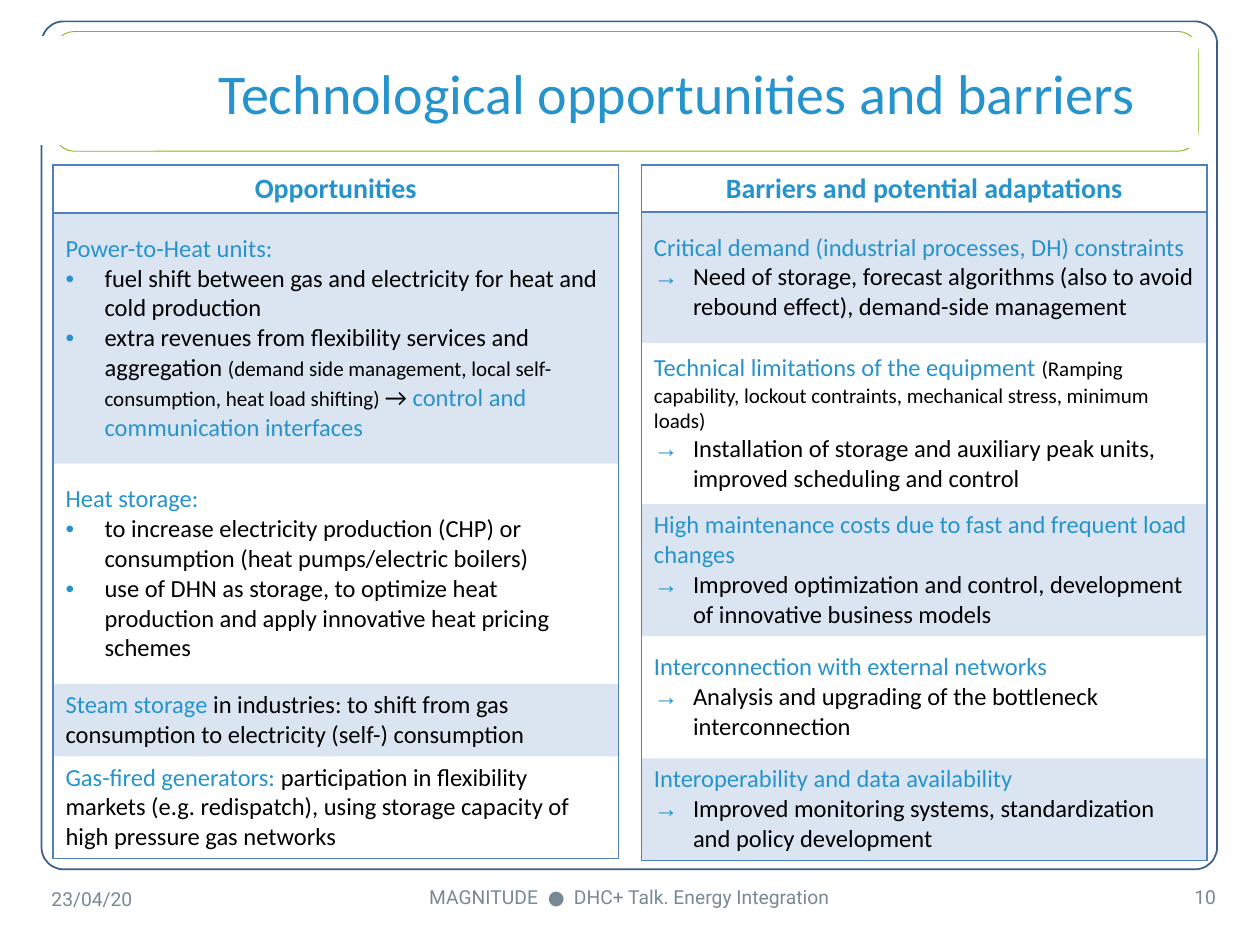
from lxml import etree
from pptx import Presentation
from pptx.dml.color import RGBColor
from pptx.enum.shapes import MSO_SHAPE
from pptx.enum.text import MSO_ANCHOR, MSO_AUTO_SIZE, PP_ALIGN
from pptx.oxml.ns import qn
from pptx.util import Inches, Pt

ROUNDED, RECTANGLE = MSO_SHAPE.ROUNDED_RECTANGLE, MSO_SHAPE.RECTANGLE
LEFT, CENTER, RIGHT = PP_ALIGN.LEFT, PP_ALIGN.CENTER, PP_ALIGN.RIGHT
MIDDLE = MSO_ANCHOR.MIDDLE

WHITE = RGBColor(0xFF, 0xFF, 0xFF)
BLACK = RGBColor(0, 0, 0)
GREEN = RGBColor(0x84, 0xB8, 0x19)
NAVY = RGBColor(0x3A, 0x5F, 0x8C)
SKY = RGBColor(0x26, 0x93, 0xCD)
GRID_BLUE = RGBColor(0x4F, 0x81, 0xBD)
GREY = RGBColor(0x77, 0x89, 0x93)

PLAIN_TABLE_STYLE = "{2D5ABB26-0587-4C30-8999-92F81FD0307C}"

# Text formats
TITLE = dict(size=Pt(32), name="Calibri")
HEADER = dict(size=Pt(16), name="Calibri", bold=True)
BODY = dict(size=Pt(14), name="Calibri", bold=False)
SMALL = dict(BODY, size=Pt(12))
FOOTER = dict(size=Pt(11), name="Roboto")

# Table rows: (height, paragraphs); a paragraph is (bullet, spans)
OPPORTUNITIES = [
    (1.99, [
        ("", [("Power-to-Heat units:", BODY, SKY)]),
        ("•", [("fuel shift between gas and electricity for heat and cold production", BODY, BLACK)]),
        ("•", [("extra revenues from flexibility services and aggregation ", BODY, BLACK),
               ("(demand side management, local self-consumption, heat load shifting) ", SMALL, BLACK),
               ("→ ", BODY, BLACK),
               ("control and communication interfaces", BODY, SKY)]),
    ]),
    (1.75, [
        ("", [("Heat storage:", BODY, SKY)]),
        ("•", [("to increase electricity production (CHP) or consumption "
                "(heat pumps/electric boilers)", BODY, BLACK)]),
        ("•", [("use of DHN as storage, to optimize heat production and apply "
                "innovative heat pricing schemes", BODY, BLACK)]),
    ]),
    (0.57, [
        ("", [("Steam storage ", BODY, SKY),
              ("in industries: to shift from gas consumption to electricity "
               "(self-) consumption", BODY, BLACK)]),
    ]),
    (0.81, [
        ("", [("Gas-fired generators: ", BODY, SKY),
              ("participation in flexibility markets (e.g. redispatch), using storage "
               "capacity of high pressure gas networks", BODY, BLACK)]),
    ]),
]
BARRIERS = [
    (1.04, [
        ("", [("Critical demand (industrial processes, DH) constraints", BODY, SKY)]),
        ("→", [("Need of storage, forecast algorithms (also to avoid rebound effect), "
                "demand-side management", BODY, BLACK)]),
    ]),
    (1.28, [
        ("", [("Technical limitations of the equipment ", BODY, SKY),
              ("(Ramping capability, lockout contraints, mechanical stress, "
               "minimum loads)", SMALL, BLACK)]),
        ("→", [("Installation of storage and auxiliary peak units, improved "
                "scheduling and control", BODY, BLACK)]),
    ]),
    (1.04, [
        ("", [("High maintenance costs due to fast and frequent load changes", BODY, SKY)]),
        ("→", [("Improved optimization and control, development of innovative "
                "business models", BODY, BLACK)]),
    ]),
    (0.97, [
        ("", [("Interconnection with external networks", BODY, SKY)]),
        ("→", [("Analysis and upgrading of the bottleneck interconnection", BODY, BLACK)]),
    ]),
    (0.74, [
        ("", [("Interoperability and data availability", BODY, SKY)]),
        ("→", [("Improved monitoring systems, standardization and policy "
                "development", BODY, BLACK)]),
    ]),
]


def add_span(para, text, style, color):
    span = para.add_run()
    span.text = text
    for name, value in style.items():
        setattr(span.font, name, value)
    span.font.color.rgb = color


def paint(shape, fill, line, width):
    if fill is None:
        shape.fill.background()
    else:
        shape.fill.solid()
        shape.fill.fore_color.rgb = fill
    shape.line.color.rgb = line
    shape.line.width = Pt(width)


def add_frame(page, kind, area, fill, line, width, corner=None):
    frame = page.shapes.add_shape(kind, *map(Inches, area))
    frame.shadow.inherit = False
    paint(frame, fill, line, width)
    if corner is not None:
        frame.adjustments[0] = corner


def set_title(page, text, area):
    title = page.shapes.title
    title.left, title.top, title.width, title.height = map(Inches, area)
    outline = etree.SubElement(title._element.spPr, qn("a:prstGeom"), prst="roundRect")
    etree.SubElement(outline, qn("a:avLst"))
    paint(title, WHITE, WHITE, 1)
    frame = title.text_frame
    frame.word_wrap, frame.auto_size = True, MSO_AUTO_SIZE.NONE
    frame.vertical_anchor = MIDDLE
    para = frame.paragraphs[0]
    para.alignment = CENTER
    add_span(para, text, TITLE, SKY)
    # Bring the title in front of the frames
    page.shapes._spTree.append(title._element)


def add_footer(page, text, area, alignment):
    box = page.shapes.add_textbox(*map(Inches, area))
    box.text_frame.word_wrap = True
    box.text_frame.vertical_anchor = MIDDLE
    para = box.text_frame.paragraphs[0]
    para.alignment = alignment
    add_span(para, text, FOOTER, GREY)


def add_bullet(para, symbol):
    properties = para._p.get_or_add_pPr()
    properties.set("marL", str(Inches(0.31)))
    properties.set("indent", str(-Inches(0.31)))
    color = etree.SubElement(properties, qn("a:buClr"))
    etree.SubElement(color, qn("a:srgbClr"), val=str(SKY))
    etree.SubElement(properties, qn("a:buFont"), typeface="Arial")
    etree.SubElement(properties, qn("a:buChar"), char=symbol)


def format_cell(cell, sides, shaded):
    properties = cell._tc.get_or_add_tcPr()
    for side in sides:
        border = etree.SubElement(properties, qn("a:ln" + side), w=str(Pt(1)))
        fill = etree.SubElement(border, qn("a:solidFill"))
        etree.SubElement(fill, qn("a:srgbClr"), val=str(GRID_BLUE))
    if shaded:
        cell.fill.solid()
        cell.fill.fore_color.rgb = GRID_BLUE
        color = properties.find(qn("a:solidFill")).find(qn("a:srgbClr"))
        etree.SubElement(color, qn("a:alpha"), val="20000")
    else:
        cell.fill.background()
    cell.vertical_anchor = MIDDLE


def add_column_table(page, left, header, header_height, body):
    rows = [(header_height, [("", [(header, HEADER, SKY)])])] + body
    height = sum(row_height for row_height, _ in rows)
    table = page.shapes.add_table(len(rows), 1, Inches(left), Inches(1.31),
                                  Inches(4.49), Inches(height)).table
    table.first_row = table.horz_banding = False
    table._tbl.tblPr.find(qn("a:tableStyleId")).text = PLAIN_TABLE_STYLE
    for index, (row_height, paragraphs) in enumerate(rows):
        table.rows[index].height = Inches(row_height)
        cell = table.cell(index, 0)
        sides = "LRTB" if index == 0 else "LRB" if index == len(body) else "LR"
        format_cell(cell, sides, shaded=index % 2 == 1)
        for number, (symbol, spans) in enumerate(paragraphs):
            frame = cell.text_frame
            para = frame.add_paragraph() if number else frame.paragraphs[0]
            para.alignment = LEFT if index else CENTER
            if symbol:
                add_bullet(para, symbol)
            for text, style, color in spans:
                add_span(para, text, style, color)


def main():
    deck = Presentation()
    deck.slide_width, deck.slide_height = Inches(10), Inches(7.5)
    page = deck.slides.add_slide(deck.slide_layouts[5])

    # Frames and title
    add_frame(page, ROUNDED, (0.43, 0.25, 9.08, 0.95), WHITE, GREEN, 0.5)
    add_frame(page, ROUNDED, (0.33, 0.17, 9.33, 6.73), None, NAVY, 1, corner=0.026)
    add_frame(page, RECTANGLE, (0.11, 0.3, 0.47, 0.84), WHITE, WHITE, 2)
    set_title(page, "Technological opportunities and barriers", (1.25, 0.3, 8.25, 0.87))

    # Tables
    add_column_table(page, 0.42, "Opportunities", 0.38, OPPORTUNITIES)
    add_column_table(page, 5.09, "Barriers and potential adaptations", 0.37, BARRIERS)

    # Footer
    add_footer(page, "23/04/20", (0.31, 6.93, 1.25, 0.4), LEFT)
    add_footer(page, "MAGNITUDE  ●  DHC+ Talk. Energy Integration", (2.85, 6.92, 4.29, 0.4), CENTER)
    add_footer(page, "10", (8.42, 6.92, 1.33, 0.4), RIGHT)

    deck.save("out.pptx")


if __name__ == "__main__":
    main()
